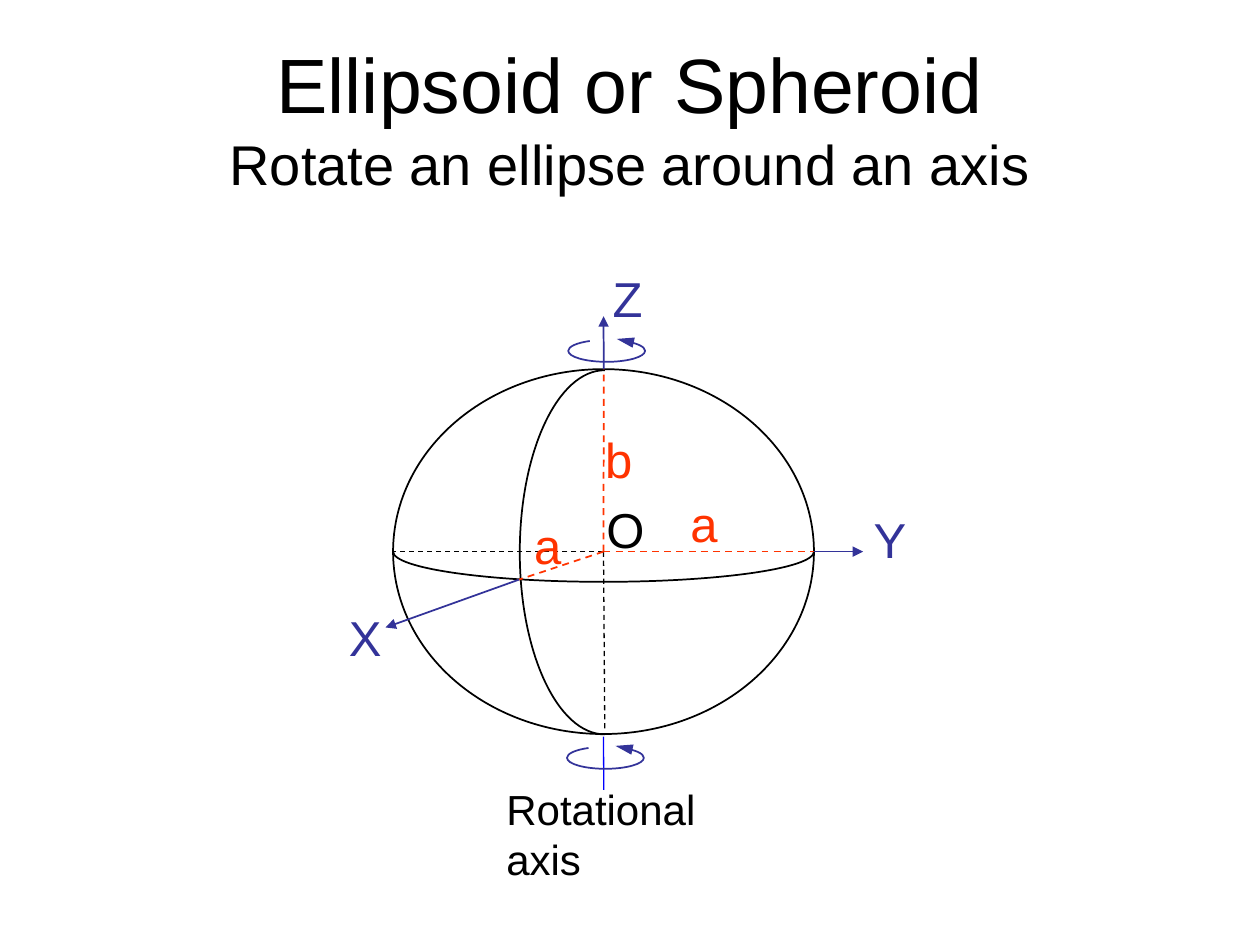
from math import cos, radians, sin, tan

from lxml.etree import SubElement
from pptx import Presentation
from pptx.dml.color import RGBColor
from pptx.enum.dml import MSO_LINE_DASH_STYLE as Dash
from pptx.enum.shapes import MSO_CONNECTOR as Connector, MSO_SHAPE as Shape
from pptx.enum.text import MSO_ANCHOR as Anchor, PP_ALIGN as Align
from pptx.oxml.ns import qn
from pptx.util import Inches, Pt

BLACK = RGBColor(0x00, 0x00, 0x00)
NAVY = RGBColor(0x33, 0x33, 0x99)
BLUE = RGBColor(0x00, 0x00, 0xFF)
RED = RGBColor(0xFF, 0x33, 0x00)

COLUMNS, ROWS = 100, 75
CELL = Inches(10) / COLUMNS
CENTER_X, CENTER_Y = 47.9, 43.78
RADIUS_A, RADIUS_B = 16.7, 14.48
LEFT, RIGHT = CENTER_X - RADIUS_A, CENTER_X + RADIUS_A
TOP, BOTTOM = CENTER_Y - RADIUS_B, CENTER_Y + RADIUS_B
CENTER = (CENTER_X, CENTER_Y)
AXIS_X = CENTER_X + 0.02
FRONT = (41.2, 46)


def cells(*counts):
    return [round(count * CELL) for count in counts]


def style_line(shape, color, width):
    shape.line.color.rgb = color
    shape.line.width = Pt(width)


def add_span(para, text, size, color):
    span = para.add_run()
    span.text = text
    span.font.name = "Arial"
    span.font.size = Pt(size)
    span.font.color.rgb = color


def add_box(page, left, top, width, height, wrap=True):
    box = page.shapes.add_textbox(*cells(left, top, width, height))
    box.text_frame.word_wrap = wrap
    return box.text_frame


def add_title(page):
    frame = add_box(page, 5, 3, 90, 12.5)
    frame.vertical_anchor = Anchor.MIDDLE
    para = frame.paragraphs[0]
    para.alignment = Align.CENTER
    add_span(para, "Ellipsoid or Spheroid", 44, BLACK)
    para.add_line_break()
    add_span(para, "Rotate an ellipse around an axis", 32, BLACK)


def add_label(page, text, left, top, width, color):
    frame = add_box(page, left, top, width, 5.7, wrap=False)
    add_span(frame.paragraphs[0], text, 28, color)


def add_line(page, start, end, color, width=1.0, dashed=False, head=None):
    line = page.shapes.add_connector(Connector.STRAIGHT, *cells(*start, *end))
    style_line(line, color, width)
    if dashed:
        line.line.dash_style = Dash.DASH
    if head:
        SubElement(line.line._get_or_add_ln(), qn("a:tailEnd"), type="triangle", len=head)
    SubElement(line._element.spPr, qn("a:effectLst"))


def bezier_points(center, radii, angles):
    def place(x, y):
        return cells(center[0] + radii[0] * x, center[1] + radii[1] * y)

    turns = [radians(angle) for angle in angles]
    points = [place(cos(turns[0]), sin(turns[0]))]
    for start, end in zip(turns, turns[1:]):
        pull = 4 / 3 * tan((end - start) / 4)
        points += [
            place(cos(start) - pull * sin(start), sin(start) + pull * cos(start)),
            place(cos(end) + pull * sin(end), sin(end) - pull * cos(end)),
            place(cos(end), sin(end)),
        ]
    return points


def add_arc(page, center, radii, angles, color):
    points = bezier_points(center, radii, angles)
    builder = page.shapes.build_freeform(*points[0])
    builder.add_line_segments(points[1:], close=False)
    arc = builder.convert_to_shape()
    segments = list(arc._element.iter(qn("a:lnTo")))
    outline = segments[0].getparent()
    for first in range(0, len(segments), 3):
        curve = SubElement(outline, qn("a:cubicBezTo"))
        for segment in segments[first:first + 3]:
            curve.append(segment[0])
            outline.remove(segment)
    arc.shadow.inherit = False
    arc.fill.background()
    style_line(arc, color, 1)


def add_rotation(page, x, y):
    add_arc(page, (x, y), (3.05, 0.87), (-64, 0, 90, 180, 244), NAVY)
    add_line(page, (x + 1.95, y - 0.7), (x + 0.8, y - 0.95), NAVY, head="lg")


def add_spheroid(page):
    outline = page.shapes.add_shape(
        Shape.OVAL, *cells(LEFT, TOP, 2 * RADIUS_A, 2 * RADIUS_B)
    )
    outline.shadow.inherit = False
    outline.fill.background()
    style_line(outline, BLACK, 1)
    add_arc(page, CENTER, (RADIUS_A, 2.4), (0, 90, 180), BLACK)
    add_arc(page, (CENTER_X + 0.1, CENTER_Y + 0.05), (6.75, 14.45), (90, 180, 270), BLACK)


def add_axes(page):
    for hidden_end in ((LEFT, CENTER_Y), (CENTER_X + 0.1, BOTTOM - 0.2)):
        add_line(page, CENTER, hidden_end, BLACK, 0.75, dashed=True)
    axes = [
        (FRONT, (30.6, 49.8)),
        ((RIGHT, CENTER_Y), (68.5, CENTER_Y)),
        ((AXIS_X, TOP), (CENTER_X, 25.1)),
    ]
    for surface, tip in axes:
        add_line(page, CENTER, surface, RED, dashed=True)
        add_line(page, surface, tip, NAVY, head="med")
    add_line(page, (CENTER_X, BOTTOM + 0.2), (AXIS_X, 62.7), BLUE, 0.75)


def main():
    deck = Presentation()
    deck.slide_width, deck.slide_height = cells(COLUMNS, ROWS)
    page = deck.slides.add_slide(deck.slide_layouts[6])
    add_title(page)
    add_spheroid(page)
    add_axes(page)
    add_rotation(page, 48.15, 27.85)
    add_rotation(page, 48.05, 60.15)
    labels = [
        ("O", 47.15, 39.15, 5, BLACK),
        ("X", 26.7, 47.7, 4.6, NAVY),
        ("Y", 68.35, 39.95, 4.6, NAVY),
        ("Z", 47.65, 20.8, 4.4, NAVY),
        ("a", 41.4, 40.4, 4.2, RED),
        ("a", 53.8, 38.65, 4.2, RED),
        ("b", 47.05, 33.6, 4.2, RED),
    ]
    for label in labels:
        add_label(page, *label)
    caption = add_box(page, 39.2, 61.7, 22.1, 5)
    add_span(caption.paragraphs[0], "Rotational axis", 24, BLACK)
    deck.save("out.pptx")


if __name__ == "__main__":
    main()
